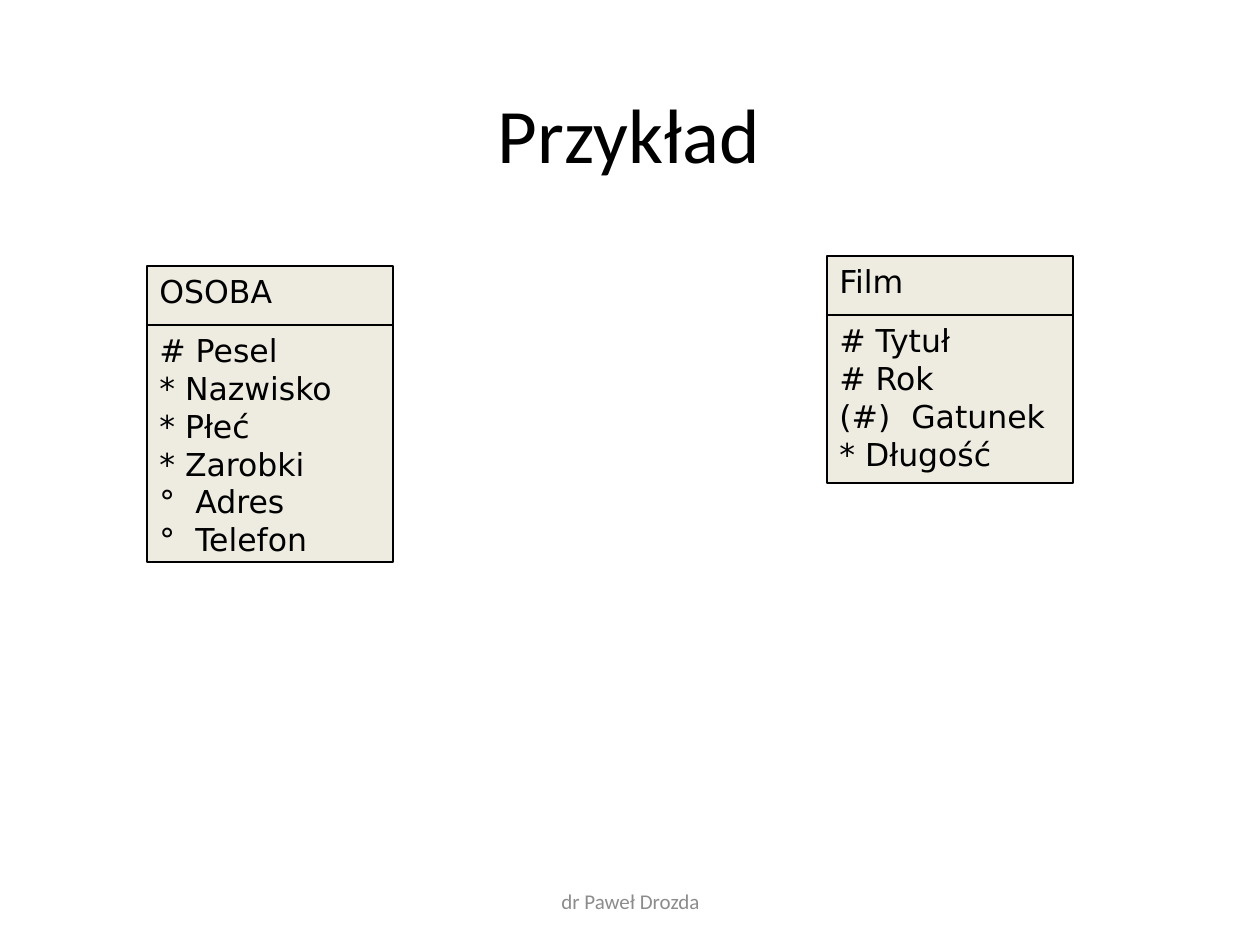
"""Build the example slide with the OSOBA and Film entities."""
from lxml.etree import SubElement
from pptx import Presentation
from pptx.dml.color import RGBColor
from pptx.enum.shapes import MSO_SHAPE as Shape
from pptx.enum.text import MSO_ANCHOR as Anchor, PP_ALIGN as Align
from pptx.oxml.ns import qn
from pptx.util import Pt

PX = 914400 / 126
COLORS = {"ink": "000000", "footer": "8C8C8C", "entity": "EEECE1"}
TITLE = ("Przykład", (78, 49, 1102, 168))
FOOTER = ("dr Paweł Drozda", (431, 876, 399, 50))
ENTITIES = [
    {"name": "OSOBA", "left": 147, "top": 266, "body": 237, "tab": 36,
     "attributes": ["# Pesel", "* Nazwisko", "* Płeć", "* Zarobki",
                    "°\tAdres", "°\tTelefon"]},
    {"name": "Film", "left": 827, "top": 256, "body": 168, "tab": 72,
     "attributes": ["# Tytuł", "# Rok", "(#)\tGatunek", "* Długość"]},
]
ENTITY_WIDTH, HEADER_HEIGHT = 246, 59


def emu(px):
    return round(px * PX)


def rgb(color):
    return RGBColor.from_string(COLORS[color])


def write(holder, lines, *, font="DejaVu Sans", size=18, color="ink",
          align=Align.LEFT, anchor=Anchor.TOP, tab=None):
    frame = holder.text_frame
    frame.word_wrap = True
    frame.vertical_anchor = anchor
    for index, line in enumerate(lines):
        paragraph = frame.add_paragraph() if index else frame.paragraphs[0]
        paragraph.alignment = align
        if "\t" in line:
            stops = SubElement(paragraph._p.get_or_add_pPr(), qn("a:tabLst"))
            SubElement(stops, qn("a:tab"), pos=str(emu(tab)), algn="l")
        run = paragraph.add_run()
        run.text = line
        run.font.name, run.font.size = font, Pt(size)
        run.font.color.rgb = rgb(color)


def add_label(slide, label, **style):
    text, place = label
    box = slide.shapes.add_textbox(*map(emu, place))
    write(box, [text], font="Calibri", align=Align.CENTER,
          anchor=Anchor.MIDDLE, **style)


def add_compartment(slide, place, lines, tab):
    compartment = slide.shapes.add_shape(Shape.RECTANGLE, *map(emu, place))
    compartment.shadow.inherit = False
    compartment.fill.solid()
    compartment.fill.fore_color.rgb = rgb("entity")
    compartment.line.color.rgb = rgb("ink")
    compartment.line.width = Pt(0.75)
    write(compartment, lines, tab=tab)


def main():
    deck = Presentation()
    deck.slide_width, deck.slide_height = emu(1260), emu(945)
    slide = deck.slides.add_slide(deck.slide_layouts[6])
    add_label(slide, TITLE, size=44)
    add_label(slide, FOOTER, size=12, color="footer")
    for entity in ENTITIES:
        left, top, tab = entity["left"], entity["top"], entity["tab"]
        add_compartment(
            slide, (left, top + HEADER_HEIGHT, ENTITY_WIDTH, entity["body"]),
            entity["attributes"], tab)
        add_compartment(slide, (left, top, ENTITY_WIDTH, HEADER_HEIGHT),
                        [entity["name"]], tab)
    deck.save("out.pptx")


if __name__ == "__main__":
    main()
